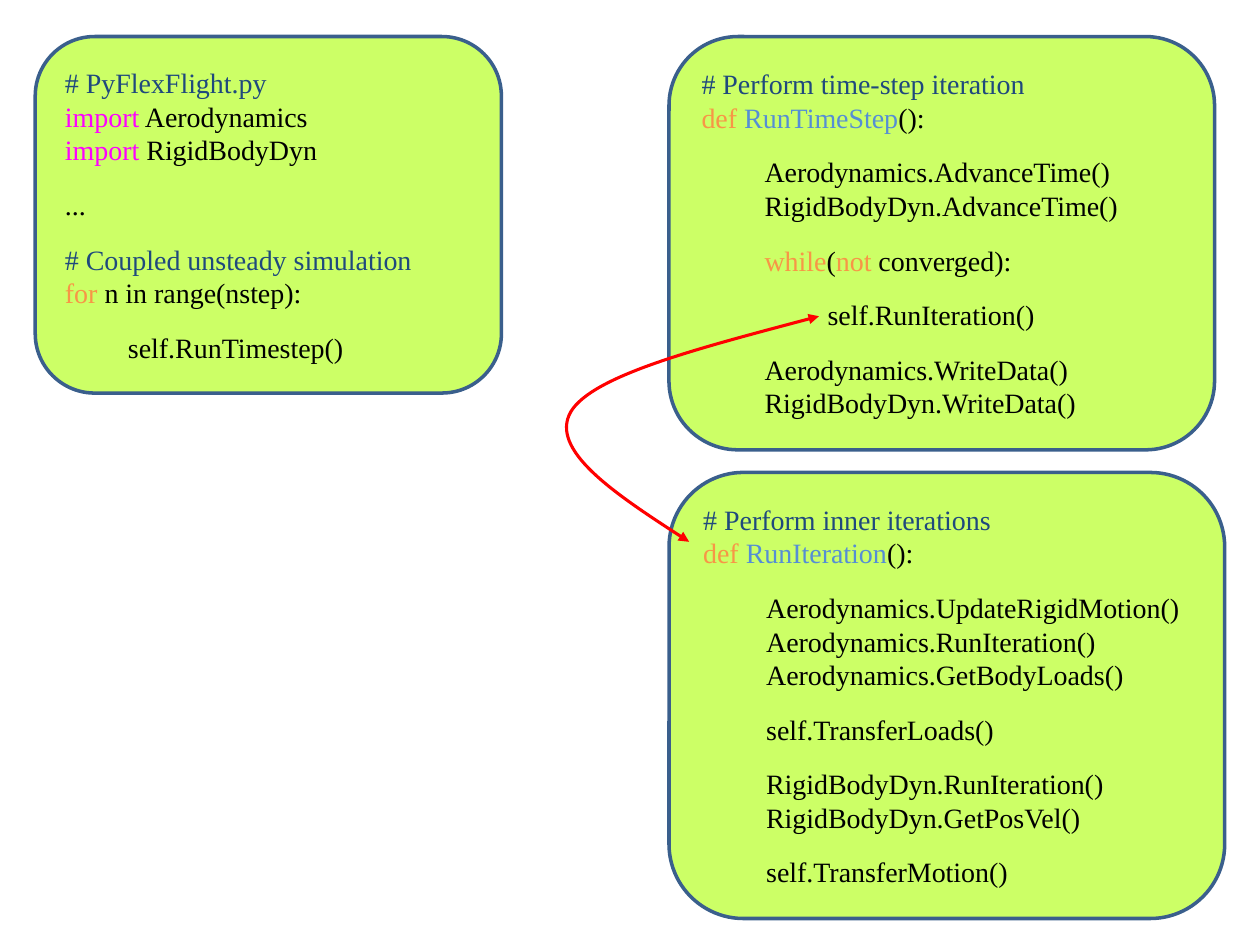
from lxml import etree
from pptx import Presentation
from pptx.dml.color import RGBColor
from pptx.enum.shapes import MSO_SHAPE
from pptx.enum.text import MSO_ANCHOR, PP_ALIGN
from pptx.oxml.ns import qn
from pptx.util import Inches, Pt

ROUNDED, MIDDLE, LEFT = MSO_SHAPE.ROUNDED_RECTANGLE, MSO_ANCHOR.MIDDLE, PP_ALIGN.LEFT

THEME = {
    "font": "Times New Roman", "size": 16, "pitch": 19.2, "gap": 12, "indent": 0.5,
    "panel": "CCFF66", "border": "3A5F8C", "border_width": 2,
    "arrow": "FF0000", "arrow_width": 1.75,
    "plain": "000000", "comment": "1F497D", "import": "FF00FF",
    "keyword": "F79646", "name": "558ED5",
}

# Each panel: box, then blocks of (indent level, lines); a line is a list of (text, role)
PANELS = [
    ((0.28, 0.29, 3.7, 2.83), [
        (0, [[("# PyFlexFlight.py", "comment")],
             [("import", "import"), (" Aerodynamics", "plain")],
             [("import ", "import"), ("RigidBodyDyn", "plain")]]),
        (0, [[("...", "plain")]]),
        (0, [[("# Coupled unsteady simulation", "comment")],
             [("for", "keyword"), (" n in range(nstep):", "plain")]]),
        (1, [[("self.RunTimestep()", "plain")]]),
    ]),
    ((5.31, 3.75, 4.41, 3.54), [
        (0, [[("# Perform inner iterations", "comment")],
             [("def ", "keyword"), ("RunIteration", "name"), ("():", "plain")]]),
        (1, [[("Aerodynamics.UpdateRigidMotion()", "plain")],
             [("Aerodynamics.RunIteration()", "plain")],
             [("Aerodynamics.GetBodyLoads()", "plain")]]),
        (1, [[("self.TransferLoads()", "plain")]]),
        (1, [[("RigidBodyDyn.RunIteration()", "plain")],
             [("RigidBodyDyn.GetPosVel()", "plain")]]),
        (1, [[("self.TransferMotion()", "plain")]]),
    ]),
    ((5.31, 0.29, 4.33, 3.28), [
        (0, [[("# Perform time-step iteration", "comment")],
             [("def ", "keyword"), ("RunTimeStep", "name"), ("():", "plain")]]),
        (1, [[("Aerodynamics.AdvanceTime()", "plain")],
             [("RigidBodyDyn.AdvanceTime()", "plain")]]),
        (1, [[("while", "keyword"), ("(", "plain"), ("not", "keyword"),
              (" converged):", "plain")]]),
        (2, [[("self.RunIteration()", "plain")]]),
        (1, [[("Aerodynamics.WriteData()", "plain")],
             [("RigidBodyDyn.WriteData()", "plain")]]),
    ]),
]

# Start point, then three Bézier points per segment
CALL_CURVE = [(5.47, 4.3), (4.91, 3.94), (4.36, 3.57), (4.53, 3.27),
              (4.7, 2.98), (5.6, 2.75), (6.5, 2.51)]


def color(role):
    return RGBColor.from_string(THEME[role])


def set_all(obj, values):
    for key, value in values.items():
        setattr(obj, key, value)


def set_line(sp, role):
    sp.line.color.rgb = color(role)
    sp.line.width = Pt(THEME[role + "_width"])
    sp.shadow.inherit = False


def add_panel(s, box, blocks):
    sp = s.shapes.add_shape(ROUNDED, *map(Inches, box))
    sp.fill.solid()
    sp.fill.fore_color.rgb = color("panel")
    set_line(sp, "border")
    tf = sp.text_frame
    set_all(tf, {"word_wrap": True, "vertical_anchor": MIDDLE})
    p = None
    for level, lines in blocks:
        for i, line in enumerate(lines):
            first = p is None
            p = tf.paragraphs[0] if first else tf.add_paragraph()
            gap = THEME["gap"] if i == 0 and not first else 0
            set_all(p, {"alignment": LEFT, "level": level, "space_before": Pt(gap),
                        "line_spacing": Pt(THEME["pitch"])})
            pPr = p._p.get_or_add_pPr()
            pPr.set("marL", str(Inches(THEME["indent"] * level)))
            pPr.set("indent", "0")
            for text, role in line:
                r = p.add_run()
                r.text = text
                set_all(r.font, {"name": THEME["font"], "size": Pt(THEME["size"])})
                r.font.color.rgb = color(role)


def add_curve(s, points):
    pts = [(Inches(x), Inches(y)) for x, y in points]
    builder = s.shapes.build_freeform(*pts[0])
    builder.add_line_segments(pts[1:], close=False)
    sp = builder.convert_to_shape()
    sp.fill.background()
    set_line(sp, "arrow")
    # Merge every three line points into one cubic segment
    outline = next(sp._element.iter(qn("a:path")))
    steps = outline.findall(qn("a:lnTo"))
    for i in range(0, len(steps), 3):
        cubic = etree.SubElement(outline, qn("a:cubicBezTo"))
        for step in steps[i:i + 3]:
            cubic.append(step[0])
            outline.remove(step)
    # Arrowheads at both ends
    ln = sp.line._get_or_add_ln()
    for end in ("a:headEnd", "a:tailEnd"):
        etree.SubElement(ln, qn(end), type="triangle")


prs = Presentation()
prs.slide_width, prs.slide_height = Inches(10), Inches(7.5)
s = prs.slides.add_slide(prs.slide_layouts[6])
for box, blocks in PANELS:
    add_panel(s, box, blocks)
add_curve(s, CALL_CURVE)
prs.save("out.pptx")
